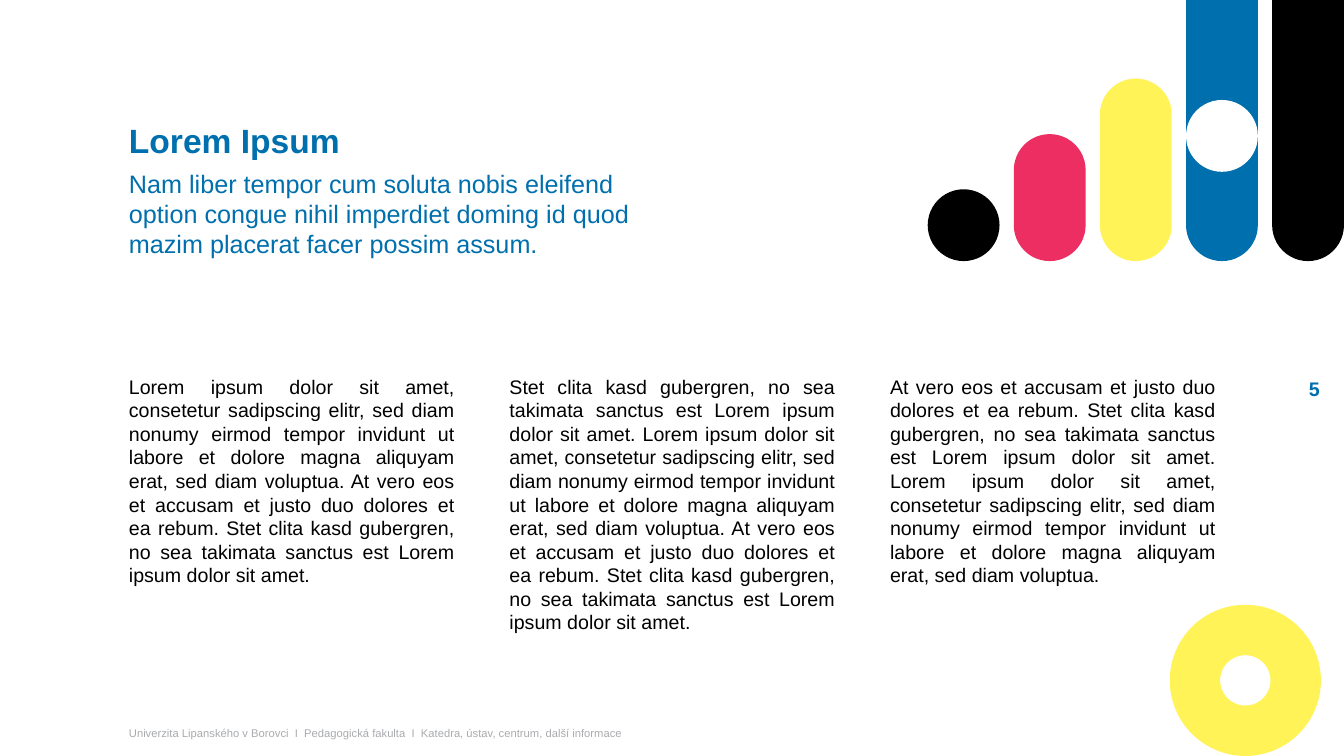
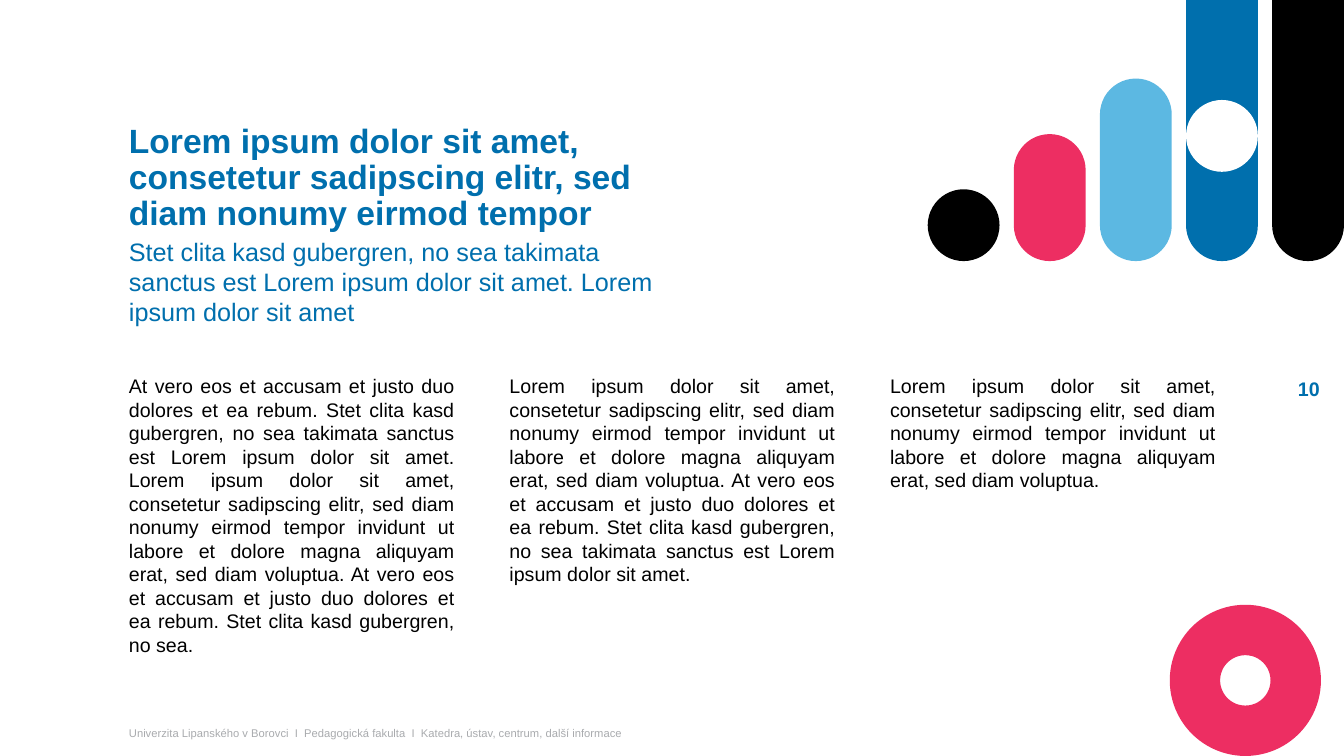
from pptx import Presentation
from pptx import util as u
from pptx.dml.color import RGBColor
from pptx.enum import shapes, text

Cm, Pt = u.Cm, u.Pt
KIND = shapes.MSO_SHAPE
ALIGN = text.PP_ALIGN


class Theme:
    font = "Arial"
    blue, sky, pink, yellow = "006FAD", "5CB8E2", "ED2E62", "FFF358"
    black, white, grey = "000000", "FFFFFF", "A9ABAE"
    title_size, subtitle_size, body_size, footer_size = 24, 18, 14, 8


# Content
FOOTER = ("Univerzita Lipanského v Borovci  I  Pedagogická fakulta  I  "
          "Katedra, ústav, centrum, další informace")
LOREM = ("Lorem ipsum dolor sit amet, consetetur sadipscing elitr, sed diam "
         "nonumy eirmod tempor invidunt ut labore et dolore magna aliquyam "
         "erat, sed diam voluptua.")
VERO = "At vero eos et accusam et justo duo dolores et ea rebum."
STET = ("Stet clita kasd gubergren, no sea takimata sanctus est Lorem ipsum "
        "dolor sit amet.")

SLIDES = [
    dict(number="5", title="Lorem Ipsum",
         subtitle="Nam liber tempor cum soluta nobis eleifend option congue "
                  "nihil imperdiet doming id quod mazim placerat facer "
                  "possim assum.",
         subtitle_top=4.11, columns_top=9.32,
         columns=[f"{LOREM} {VERO} {STET}",
                  f"{STET} {LOREM} {VERO} {STET}",
                  f"{VERO} {STET} {LOREM}"],
         middle_bar=Theme.yellow, ring=Theme.yellow),
    dict(number="10",
         title="Lorem ipsum dolor sit amet, consetetur sadipscing elitr, "
               "sed diam nonumy eirmod tempor",
         subtitle="Stet clita kasd gubergren, no sea takimata sanctus est "
                  "Lorem ipsum dolor sit amet. Lorem ipsum dolor sit amet",
         subtitle_top=5.82, columns_top=9.3,
         columns=[f"{VERO} {STET} {LOREM} {VERO} "
                  "Stet clita kasd gubergren, no sea.",
                  f"{LOREM} {VERO} {STET}",
                  LOREM],
         middle_bar=Theme.sky, ring=Theme.pink),
]

# Layout in centimetres
PAGE_W, PAGE_H = 33.87, 19.05
MARGIN, HEAD_W = 3, 13.94
COLUMN_W, COLUMN_STEP = 8.71, 9.59
BAR_W, BAR_STEP, BARS_BOTTOM = 1.81, 2.17, 6.58
RING = 3.81


def add_text(slide, words, box, size, color, bold=False, align=ALIGN.LEFT,
             before=0, line=None, middle=False, wrap=True):
    frame = slide.shapes.add_textbox(*map(Cm, box)).text_frame
    frame.word_wrap = wrap
    frame.auto_size = text.MSO_AUTO_SIZE.SHAPE_TO_FIT_TEXT
    frame.vertical_anchor = (text.MSO_ANCHOR.MIDDLE if middle
                             else text.MSO_ANCHOR.TOP)
    paragraph = frame.paragraphs[0]
    paragraph.alignment = align
    paragraph.space_before = Pt(before)
    if line:
        paragraph.line_spacing = line
    run = paragraph.add_run()
    run.text = words
    run.font.name, run.font.size, run.font.bold = Theme.font, Pt(size), bold
    run.font.color.rgb = RGBColor.from_string(color)


def add_figure(slide, kind, box, color, adjustments=()):
    figure = slide.shapes.add_shape(kind, *map(Cm, box))
    for i, value in enumerate(adjustments):
        figure.adjustments[i] = value
    figure.shadow.inherit = False
    figure.fill.solid()
    figure.fill.fore_color.rgb = RGBColor.from_string(color)
    figure.line.fill.background()


def add_bars(slide, middle_color):
    """Rising bars on one baseline; the last two hang from the top edge."""
    pill, hanging = (KIND.ROUNDED_RECTANGLE, [0.5]), (KIND.ROUND_2_SAME_RECTANGLE, [0, 0.5])
    bars = [((KIND.OVAL, []), BAR_W, Theme.black),
            (pill, 3.2, Theme.pink),
            (pill, 4.6, middle_color),
            (hanging, BARS_BOTTOM, Theme.blue),
            (hanging, BARS_BOTTOM, Theme.black)]
    first = PAGE_W - BAR_W - BAR_STEP * (len(bars) - 1)
    lefts = [first + i * BAR_STEP for i in range(len(bars))]
    for left, ((kind, adjustments), height, color) in zip(lefts, bars):
        add_figure(slide, kind, (left, BARS_BOTTOM - height, BAR_W, height),
                   color, adjustments)
    add_figure(slide, KIND.OVAL, (lefts[3], 2.52, BAR_W, BAR_W), Theme.white)


def add_frame(slide, page):
    """Decoration, footer and page number shared by all slides."""
    add_figure(slide, KIND.DONUT, (29.48, PAGE_H - RING, RING, RING),
               page["ring"], [1 / 3])
    add_bars(slide, page["middle_bar"])
    add_text(slide, FOOTER, (MARGIN, 18.16, HEAD_W, 0.6),
             Theme.footer_size, Theme.grey, middle=True)
    add_text(slide, page["number"], (32.39, 9.37, 1.12, 0.86),
             Theme.body_size, Theme.blue, bold=True, align=ALIGN.RIGHT,
             middle=True, wrap=False)


def add_page(deck, page):
    slide = deck.slides.add_slide(deck.slide_layouts[6])
    add_frame(slide, page)
    # Heading
    add_text(slide, page["title"], (MARGIN, 3, HEAD_W, 1.17),
             Theme.title_size, Theme.blue, bold=True, line=0.9)
    add_text(slide, page["subtitle"],
             (MARGIN, page["subtitle_top"], HEAD_W, 2.57),
             Theme.subtitle_size, Theme.blue, before=3)
    # Text columns
    for i, words in enumerate(page["columns"]):
        add_text(slide, words,
                 (MARGIN + i * COLUMN_STEP, page["columns_top"], COLUMN_W, 5.64),
                 Theme.body_size, Theme.black, align=ALIGN.JUSTIFY, before=3)


def main():
    deck = Presentation()
    deck.slide_width, deck.slide_height = Cm(PAGE_W), Cm(PAGE_H)
    for page in SLIDES:
        add_page(deck, page)
    deck.save("out.pptx")


if __name__ == "__main__":
    main()
